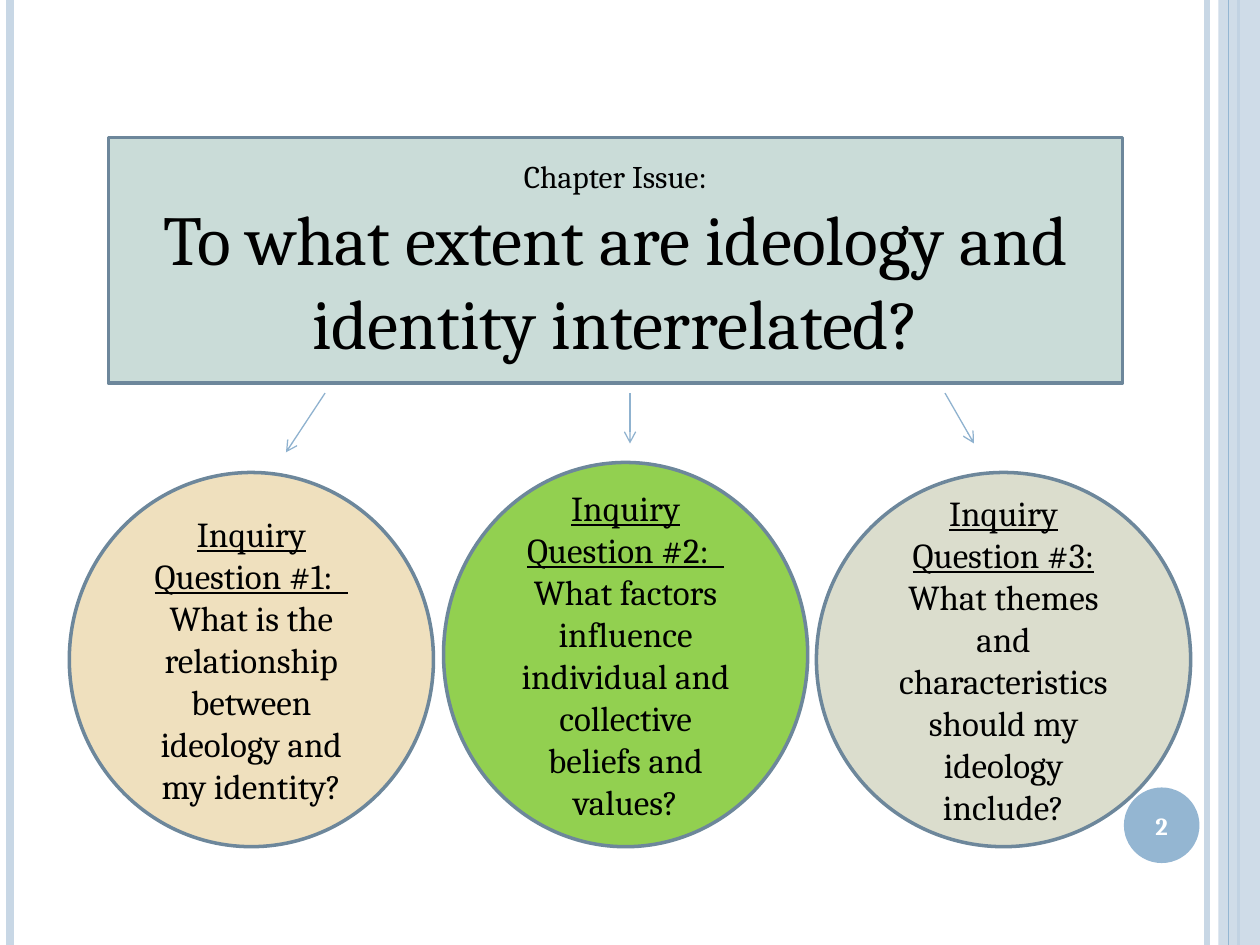
from pptx import Presentation, util as u
from pptx.dml import color
from pptx.enum import shapes, text
from pptx.oxml import ns, xmlchemy as xc

HUES = {
    "pale": "C8D7E5", "blue": "94B6D2", "arrow": "8FB2CF", "edge": "6D879B",
    "box": "CADCD8", "sand": "EFE0BE", "green": "92D050", "sage": "DBDDCD",
    "black": "000000", "white": "FFFFFF",
}
RGB = {name: color.RGBColor.from_string(hue) for name, hue in HUES.items()}
FRAME = {"word_wrap": True, "auto_size": text.MSO_AUTO_SIZE.NONE,
         "vertical_anchor": text.MSO_ANCHOR.MIDDLE}
PLAIN = {"name": "Cambria", "bold": False, "underline": False}

deck = Presentation()
deck.slide_width, deck.slide_height = u.Inches(10), u.Inches(7.5)
slide = deck.slides.add_slide(deck.slide_layouts[5])
items = slide.shapes


def rule(start, end, hue, width):
    line = items.add_connector(shapes.MSO_CONNECTOR.STRAIGHT,
                               *map(u.Inches, start + end))
    line.line.color.rgb = RGB[hue]
    line.line.width = u.Pt(width)
    line._element.spPr.append(xc.OxmlElement("a:effectLst"))
    return line


def dress(shape, fill, edge, paras):
    shape.fill.solid()
    shape.fill.fore_color.rgb = RGB[fill]
    if edge:
        shape.line.color.rgb = RGB[edge]
        shape.line.width = u.Pt(2)
    else:
        shape.line.fill.background()
    frame = shape.text_frame
    for key, value in FRAME.items():
        setattr(frame, key, value)
    for i, (words, size, hue, style) in enumerate(paras):
        para = frame.add_paragraph() if i else frame.paragraphs[0]
        para.alignment = text.PP_ALIGN.CENTER
        run = para.add_run()
        run.text = words
        for key, value in {**PLAIN, "size": u.Pt(size), **style}.items():
            setattr(run.font, key, value)
        run.font.color.rgb = RGB[hue]


for x, hue, width in [(9.58, "pale", 3), (0.08, "pale", 4.5), (9.83, "blue", 1.5)]:
    rule((x, 0), (x, 7.5), hue, width)

band = items.add_shape(shapes.MSO_SHAPE.RECTANGLE,
                       *map(u.Inches, (9.67, 0, 0.33, 7.5)))
band.shadow.inherit = False
dress(band, "pale", None, [])
alpha = xc.OxmlElement("a:alpha")
alpha.set("val", "87000")
band._element.spPr.find(".//" + ns.qn("a:srgbClr")).append(alpha)
rule((9.75, 0), (9.75, 7.5), "blue", 0.75)

issue = items.title
for key, value in zip(("left", "top", "width", "height"), (0.86, 1.09, 8.05, 1.95)):
    setattr(issue, key, u.Inches(value))
dress(issue, "box", "edge", [
    ("Chapter Issue:", 18, "black", {}),
    ("To what extent are ideology and identity interrelated?", 40, "black", {}),
])

asks = [
    ((0.55, 3.75, 2.89, 2.97), "sand", "Inquiry Question #1:  ",
     "What is the relationship between ideology and my identity?"),
    ((3.52, 3.67, 2.89, 3.05), "green", "Inquiry Question #2:  ",
     "What factors influence individual and collective beliefs and values?"),
    ((6.48, 3.75, 2.97, 2.97), "sage", "Inquiry Question #3:",
     "What themes and characteristics should my ideology include?"),
]
for place, fill, head, ask in asks:
    disc = items.add_shape(shapes.MSO_SHAPE.OVAL, *map(u.Inches, place))
    disc.shadow.inherit = False
    dress(disc, fill, "edge", [(head, 20, "black", {"underline": True}),
                               (ask, 20, "black", {})])

for start, end in [((5, 3.12), (5, 3.52)), ((7.5, 3.12), (7.73, 3.52)),
                   ((2.58, 3.12), (2.27, 3.59))]:
    arrow = rule(start, end, "arrow", 0.75)
    tip = xc.OxmlElement("a:tailEnd")
    tip.set("type", "arrow")
    arrow.line._get_or_add_ln().append(tip)

badge = items.add_shape(shapes.MSO_SHAPE.OVAL,
                        *map(u.Inches, (8.92, 6.25, 0.6, 0.6)))
badge.shadow.inherit = False
dress(badge, "blue", None, [("2", 14, "white", {"bold": True})])
for side in ("left", "top", "right", "bottom"):
    setattr(badge.text_frame, "margin_" + side, 0)

deck.save("out.pptx")
